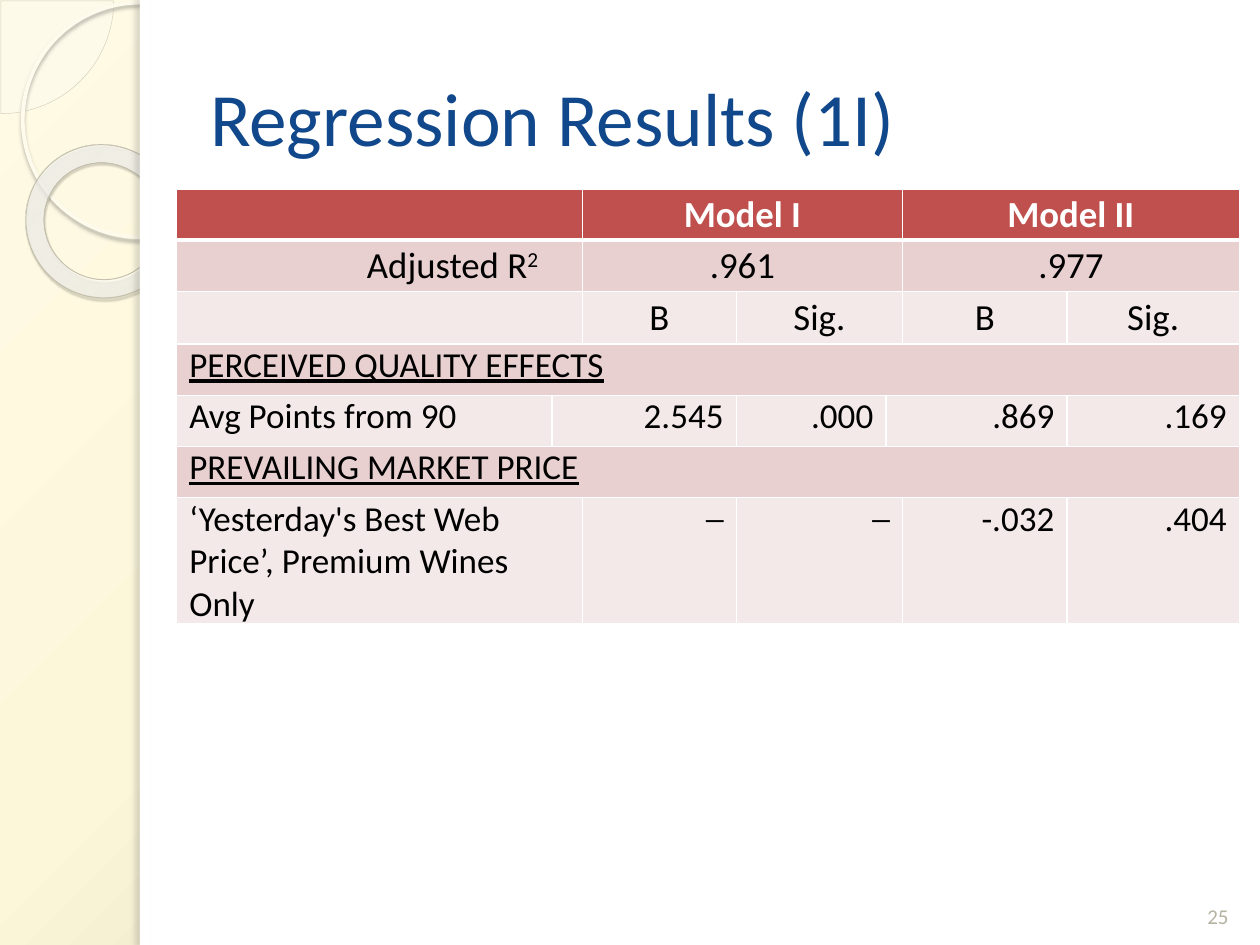
from lxml.etree import SubElement
from pptx import Presentation
from pptx.dml.color import RGBColor
from pptx.enum.shapes import MSO_SHAPE
from pptx.enum.text import MSO_ANCHOR, PP_ALIGN
from pptx.oxml.ns import qn
from pptx.util import Pt

WHITE = RGBColor(0xFF, 0xFF, 0xFF)
BLACK = RGBColor(0, 0, 0)
NAVY = RGBColor(0x11, 0x47, 0x8B)
RED = RGBColor(0xC0, 0x50, 0x4D)
ROSE = RGBColor(0xE8, 0xD0, 0xD0)
BLUSH = RGBColor(0xF4, 0xE9, 0xE9)
STONE = RGBColor(0xB5, 0xB2, 0xA2)
IVORY = RGBColor(0xFD, 0xFD, 0xF9)
PIE_LINE = RGBColor(0xD1, 0xCE, 0xBB)
RING_LINE = RGBColor(0xFE, 0xFB, 0xEC)
DONUT_LINE = RGBColor(0xC5, 0xC1, 0xAE)
RING_SHADOW = RGBColor(0xB2, 0xB0, 0xA4)
DONUT_SHADOW = RGBColor(0x5A, 0x58, 0x50)
EDGE_SHADOW = RGBColor(0x77, 0x75, 0x6F)
PAGE_STOPS = [(0, RGBColor(0xFE, 0xFA, 0xE4), 100), (40, RGBColor(0xFD, 0xF7, 0xDA), 100),
              (100, RGBColor(0xC2, 0xBD, 0xA3), 100)]
DONUT_STOPS = [(0, RGBColor(0xFE, 0xFD, 0xFA), 70), (70, RGBColor(0xFF, 0xFF, 0xFC), 55),
               (100, RGBColor(0xE2, 0xDB, 0xB7), 60)]

FONT = "Calibri"
LEFT, CENTER, RIGHT = PP_ALIGN.LEFT, PP_ALIGN.CENTER, PP_ALIGN.RIGHT
TITLE = "Regression Results (1I)"
PAGE_NUMBER = "25"
COLUMNS = [214.5, 9.5, 88, 85.5, 9.5, 94, 98.5]
ROW_HEIGHTS = [29.25, 29.25, 30.25, 29.25, 29.25, 29.25, 72]
HEAD = dict(size=Pt(21), bold=True, color=WHITE)
MODEL = dict(size=Pt(21), bold=False, color=BLACK)
BODY = dict(size=Pt(20), bold=False, color=BLACK)
SECTION = dict(BODY, underline=True)
THREE_PARTS = [2, 3, 2]
FIVE_PARTS = [2, 1, 2, 1, 1]
ROWS = [
    (RED, HEAD, THREE_PARTS, ["", "Model I", "Model II"], CENTER, CENTER),
    (ROSE, MODEL, THREE_PARTS, ["Adjusted R", ".961", ".977"], LEFT, CENTER),
    (BLUSH, MODEL, FIVE_PARTS, ["", "B", "Sig.", "B", "Sig."], CENTER, CENTER),
    (ROSE, SECTION, [7], ["PERCEIVED QUALITY EFFECTS"], LEFT, RIGHT),
    (BLUSH, BODY, [1, 2, 1, 2, 1], ["Avg Points from 90", "2.545", ".000", ".869", ".169"], LEFT, RIGHT),
    (ROSE, SECTION, [7], ["PREVAILING MARKET PRICE"], LEFT, RIGHT),
    (BLUSH, BODY, FIVE_PARTS,
     ["‘Yesterday's Best Web Price’, Premium Wines Only", "─", "─", "-.032", ".404"], LEFT, RIGHT),
]


def add_color(parent, color, opacity=100):
    node = SubElement(parent, qn("a:srgbClr"), val=str(color))
    if opacity < 100:
        SubElement(node, qn("a:alpha"), val=str(opacity * 1000))


def set_gradient(fill, element, stops, focus):
    fill.gradient()
    gradient = element.find(".//" + qn("a:gradFill"))
    for child in list(gradient):
        gradient.remove(child)
    stop_list = SubElement(gradient, qn("a:gsLst"))
    for position, color, opacity in stops:
        add_color(SubElement(stop_list, qn("a:gs"), pos=str(position * 1000)), color, opacity)
    circle = SubElement(gradient, qn("a:path"), {"path": "circle"})
    SubElement(circle, qn("a:fillToRect"),
               {side: str(value * 1000) for side, value in zip("ltrb", focus)})


def add_figure(page, kind, bounds, fill=None, line=None, width=0, shadow=None):
    figure = page.shapes.add_shape(kind, *map(Pt, bounds))
    figure.shadow.inherit = False
    if fill is None:
        figure.fill.background()
    else:
        figure.fill.solid()
        figure.fill.fore_color.rgb = fill
    if line is None:
        figure.line.fill.background()
    else:
        figure.line.color.rgb = line
        figure.line.width = Pt(width)
    if shadow:
        color, opacity, blur, distance, angle = shadow
        effects = figure.element.spPr.find(qn("a:effectLst"))
        outer = SubElement(effects, qn("a:outerShdw"), blurRad=str(Pt(blur)),
                           dist=str(Pt(distance)), dir=str(angle * 60000), rotWithShape="0")
        add_color(outer, color, opacity)
    return figure


def add_span(para, text, style):
    span = para.add_run()
    span.text = text
    span.font.name = FONT
    for name, value in style.items():
        if name == "color":
            span.font.color.rgb = value
        else:
            setattr(span.font, name, value)
    return span


def add_label(page, bounds, text, style, anchor, align):
    box = page.shapes.add_textbox(*map(Pt, bounds))
    frame = box.text_frame
    frame.word_wrap = True
    frame.vertical_anchor = anchor
    para = frame.paragraphs[0]
    para.alignment = align
    add_span(para, text, style)


def set_borders(cell, is_header, follows_header):
    properties = cell._tc.get_or_add_tcPr()
    widths = {"L": 1, "R": 1, "T": 3 if follows_header else 1, "B": 3 if is_header else 1}
    for side, width in widths.items():
        border = SubElement(properties, qn("a:ln" + side), w=str(Pt(width)))
        add_color(SubElement(border, qn("a:solidFill")), WHITE)


def add_decoration(page):
    set_gradient(page.background.fill, page.element, PAGE_STOPS, (-24, -20, 124, 120))
    pie = add_figure(page, MSO_SHAPE.PIE, (-64, -64, 129, 129), IVORY, PIE_LINE, 0.25)
    pie.adjustments[0] = 0
    pie.adjustments[1] = 54
    tint = pie.element.spPr.find(qn("a:solidFill"))[0]
    SubElement(tint, qn("a:alpha"), val="33000")
    add_figure(page, MSO_SHAPE.OVAL, (13, 1.5, 134, 134), None, RING_LINE, 2.15,
               (RING_SHADOW, 85, 2, 2, 90))
    donut = add_figure(page, MSO_SHAPE.DONUT, (14.5, 83, 88.5, 87), None, DONUT_LINE, 0.58,
                       (DONUT_SHADOW, 35, 1, 1.2, 75))
    donut.rotation = 38.6
    donut.adjustments[0] = 0.12
    set_gradient(donut.fill, donut.element, DONUT_STOPS, (-408, -50, 508, 150))
    add_figure(page, MSO_SHAPE.RECTANGLE, (80, 0, 640, 540), WHITE)
    add_figure(page, MSO_SHAPE.RECTANGLE, (80, 0, 6, 540), WHITE,
               shadow=(EDGE_SHADOW, 25, 3, 3, 180))


def add_results(page):
    table = page.shapes.add_table(len(ROWS), len(COLUMNS), Pt(101), Pt(108),
                                  Pt(sum(COLUMNS)), Pt(sum(ROW_HEIGHTS))).table
    table.first_row = table.horz_banding = False
    for column, width in zip(table.columns, COLUMNS):
        column.width = Pt(width)
    for row, height in zip(table.rows, ROW_HEIGHTS):
        row.height = Pt(height)
    for index, (color, style, spans, texts, first_align, align) in enumerate(ROWS):
        for cell in table.rows[index].cells:
            set_borders(cell, index == 0, index == 1)
            cell.fill.solid()
            cell.fill.fore_color.rgb = color
            cell.margin_top = cell.margin_bottom = 0
            cell.vertical_anchor = MSO_ANCHOR.MIDDLE if index < 3 else MSO_ANCHOR.TOP
        start = 0
        for text, count in zip(texts, spans):
            cell = table.cell(index, start)
            if count > 1:
                cell.merge(table.cell(index, start + count - 1))
            para = cell.text_frame.paragraphs[0]
            para.alignment = align if start else first_align
            if text:
                add_span(para, text, style)
            start += count
    adjusted = table.cell(1, 0).text_frame.paragraphs[0]
    adjusted._p.get_or_add_pPr().set("marL", str(Pt(101.5)))
    exponent = add_span(adjusted, "2", MODEL)
    exponent._r.get_or_add_rPr().set("baseline", "30000")


def main():
    deck = Presentation()
    deck.slide_width, deck.slide_height = Pt(720), Pt(540)
    page = deck.slides.add_slide(deck.slide_layouts[6])
    add_decoration(page)
    add_label(page, (113, 21.5, 590.5, 90), TITLE, dict(size=Pt(43), color=NAVY),
              MSO_ANCHOR.MIDDLE, LEFT)
    add_results(page)
    add_label(page, (678, 497, 36, 37.5), PAGE_NUMBER, dict(size=Pt(12), color=STONE),
              MSO_ANCHOR.BOTTOM, CENTER)
    deck.save("out.pptx")


if __name__ == "__main__":
    main()
